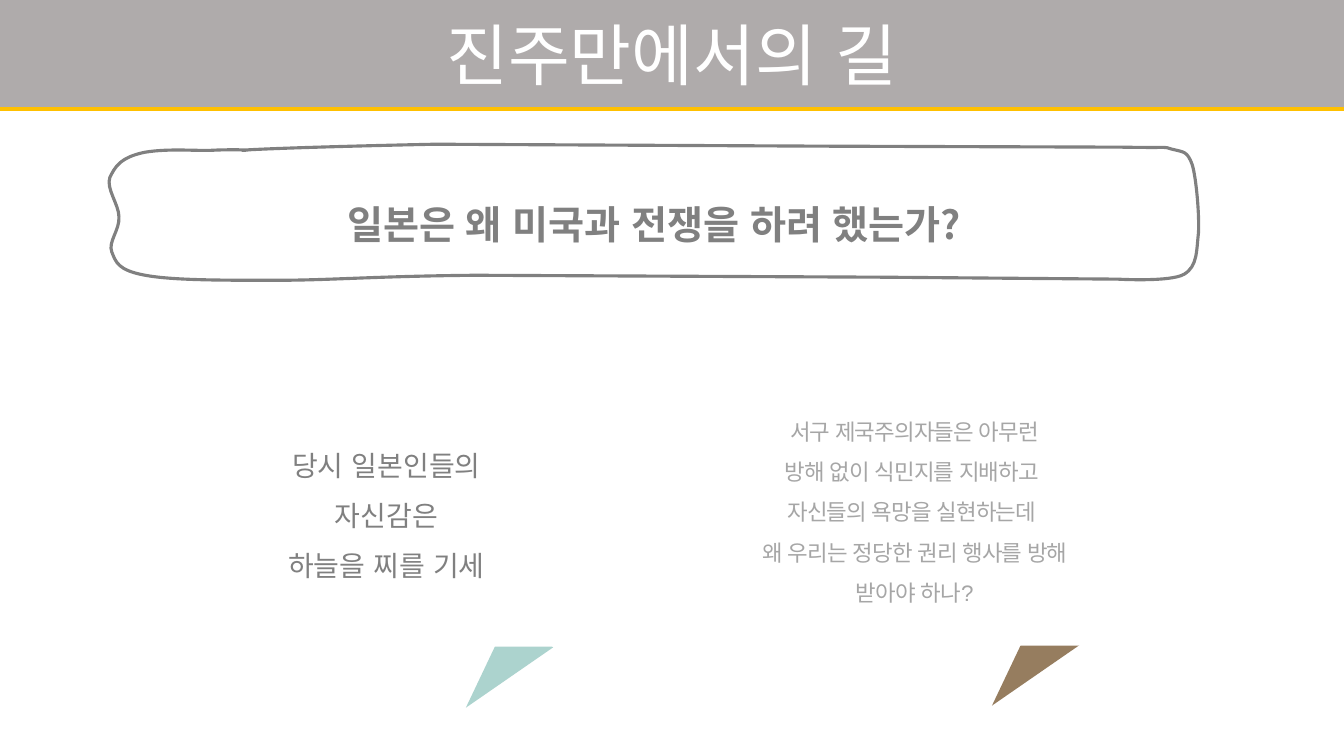
from dataclasses import dataclass

from lxml import etree
from pptx import Presentation
from pptx.dml.color import RGBColor
from pptx.enum.shapes import MSO_SHAPE
from pptx.enum.text import MSO_ANCHOR, PP_ALIGN
from pptx.oxml.ns import qn
from pptx.util import Pt

RECTANGLE = MSO_SHAPE.RECTANGLE
TRIANGLE = MSO_SHAPE.ISOSCELES_TRIANGLE
MIDDLE = MSO_ANCHOR.MIDDLE
CENTER = PP_ALIGN.CENTER


@dataclass(frozen=True)
class Theme:
    white: str = "FFFFFF"
    banner: str = "AFABAB"
    accent: str = "FFC000"
    dark: str = "808080"
    light: str = "A6A6A6"
    teal: str = "ACD3CE"
    brown: str = "967D5F"
    korean: str = "Noto Sans CJK KR"
    latin: str = "Arial"
    title: int = 48
    question: int = 28
    claim: int = 20
    reason: int = 16


THEME = Theme()

# Outline in points: two numbers make a line, six make a Bézier curve.
FRAME_START = (172.8, 107.3)
FRAME_SEGMENTS = [
    (207.4, 105.1, 311, 103, 311, 103),
    (587.5, 104.4),
    (800.6, 105.1),
    (842.4, 105.8, 828.7, 104.4, 837.4, 106.6),
    (846, 108.7, 848.2, 108, 851.8, 118.1),
    (854.6, 128.2, 856.8, 153.4, 856.1, 166.3),
    (854.6, 179.3, 855.4, 190.1, 846, 195.8),
    (836.6, 201.6, 798.5, 199.4, 798.5, 199.4),
    (631.4, 198),
    (339.8, 196.6),
    (267.1, 197.3, 236.2, 200.2, 196.6, 200.2),
    (157.7, 200.2, 123.1, 200.2, 103.7, 196.6),
    (84.2, 193, 82.8, 187.2, 79.9, 180),
    (77, 172.8, 85.7, 164.2, 85, 154.8),
    (85, 146.2, 75.6, 134.6, 78.5, 126.7),
    (82.1, 119.5, 85.7, 112.3, 103.7, 108.7),
    (121.7, 105.8, 141.1, 108, 152.6, 107.3),
    (164.9, 106.6, 186.5, 107.3, 172.8, 107.3),
]

CLAIM = ["당시 일본인들의", "자신감은", "하늘을 찌를 기세"]
REASON = [
    "서구 제국주의자들은 아무런",
    "방해 없이 식민지를 지배하고 ",
    "자신들의 욕망을 실현하는데 ",
    "왜 우리는 정당한 권리 행사를 방해 받아야 하나?",
]


def paint(shape, color):
    shape.shadow.inherit = False
    shape.fill.solid()
    shape.fill.fore_color.rgb = RGBColor.from_string(color)
    shape.line.fill.background()


def add_shape(page, kind, bounds, color):
    shape = page.shapes.add_shape(kind, *map(Pt, bounds))
    paint(shape, color)
    return shape


def write(shape, lines, size, color, font=THEME.korean, bold=False, spacing=1.5, tracking=0):
    """Fill a shape with centred lines; tracking is in points."""
    frame = shape.text_frame
    frame.word_wrap = True
    frame.vertical_anchor = MIDDLE
    frame.text = "\n".join(lines)
    for para in frame.paragraphs:
        para.alignment = CENTER
        para.line_spacing = spacing
        for span in para.runs:
            span.font.size = Pt(size)
            span.font.bold = bold
            span.font.name = font
            span.font.color.rgb = RGBColor.from_string(color)
            properties = span.font._element
            etree.SubElement(properties, qn("a:ea"), typeface=THEME.latin)
            if tracking:
                properties.set("spc", str(round(tracking * 100)))


def add_hard_shadow(shape, color, distance):
    """Drop an unblurred shadow straight down."""
    effects = shape._element.spPr.find(qn("a:effectLst"))
    shadow = etree.SubElement(
        effects, qn("a:outerShdw"), blurRad="0", dist=str(Pt(distance)),
        dir="5400000", algn="t", rotWithShape="0")
    etree.SubElement(shadow, qn("a:srgbClr"), val=color)


def bend(shape, segments):
    """Turn the straight segments that have control points into Bézier curves."""
    lines = list(shape._element.spPr.iter(qn("a:lnTo")))
    for line, segment in zip(lines, segments):
        if len(segment) == 2:
            continue
        curve = etree.Element(qn("a:cubicBezTo"))
        for x, y in zip(segment[::2], segment[1::2]):
            etree.SubElement(curve, qn("a:pt"),
                             x=str(Pt(x) - shape.left), y=str(Pt(y) - shape.top))
        line.getparent().replace(line, curve)


def add_question(page):
    builder = page.shapes.build_freeform(*map(Pt, FRAME_START))
    ends = [tuple(map(Pt, segment[-2:])) for segment in FRAME_SEGMENTS]
    builder.add_line_segments(ends, close=True)
    frame = builder.convert_to_shape()
    bend(frame, FRAME_SEGMENTS)
    paint(frame, THEME.white)
    frame.line.color.rgb = RGBColor.from_string(THEME.dark)
    frame.line.width = Pt(2.25)
    write(frame, ["일본은 왜 미국과 전쟁을 하려 했는가?"],
          THEME.question, THEME.dark, bold=True)


def add_banner(page):
    banner = add_shape(page, RECTANGLE, (0, 0, 960, 76.3), THEME.banner)
    add_hard_shadow(banner, THEME.accent, 3)
    write(banner, ["진주만에서의 길"], THEME.title, THEME.white, spacing=1)


def add_bubble(page, bounds, tail_corner, tail_color):
    """Add a white box whose tail shows below its lower edge."""
    tail = add_shape(page, TRIANGLE, (*tail_corner, 38.9, 72.7), tail_color)
    tail.adjustments[0] = 0.552
    tail.rotation = 218.9
    return add_shape(page, RECTANGLE, bounds, THEME.white)


def main():
    deck = Presentation()
    deck.slide_width, deck.slide_height = Pt(960), Pt(540)
    page = deck.slides.add_slide(deck.slide_layouts[6])

    add_question(page)
    add_banner(page)
    claim = add_bubble(page, (156.2, 262.3, 239.8, 199.6), (337.7, 442.1), THEME.teal)
    write(claim, CLAIM, THEME.claim, THEME.dark)
    reason = add_bubble(page, (534.2, 260.5, 238.3, 200.7), (713.5, 440.6), THEME.brown)
    write(reason, REASON, THEME.reason, THEME.light, font=THEME.latin, tracking=-0.5)

    deck.save("out.pptx")


if __name__ == "__main__":
    main()
